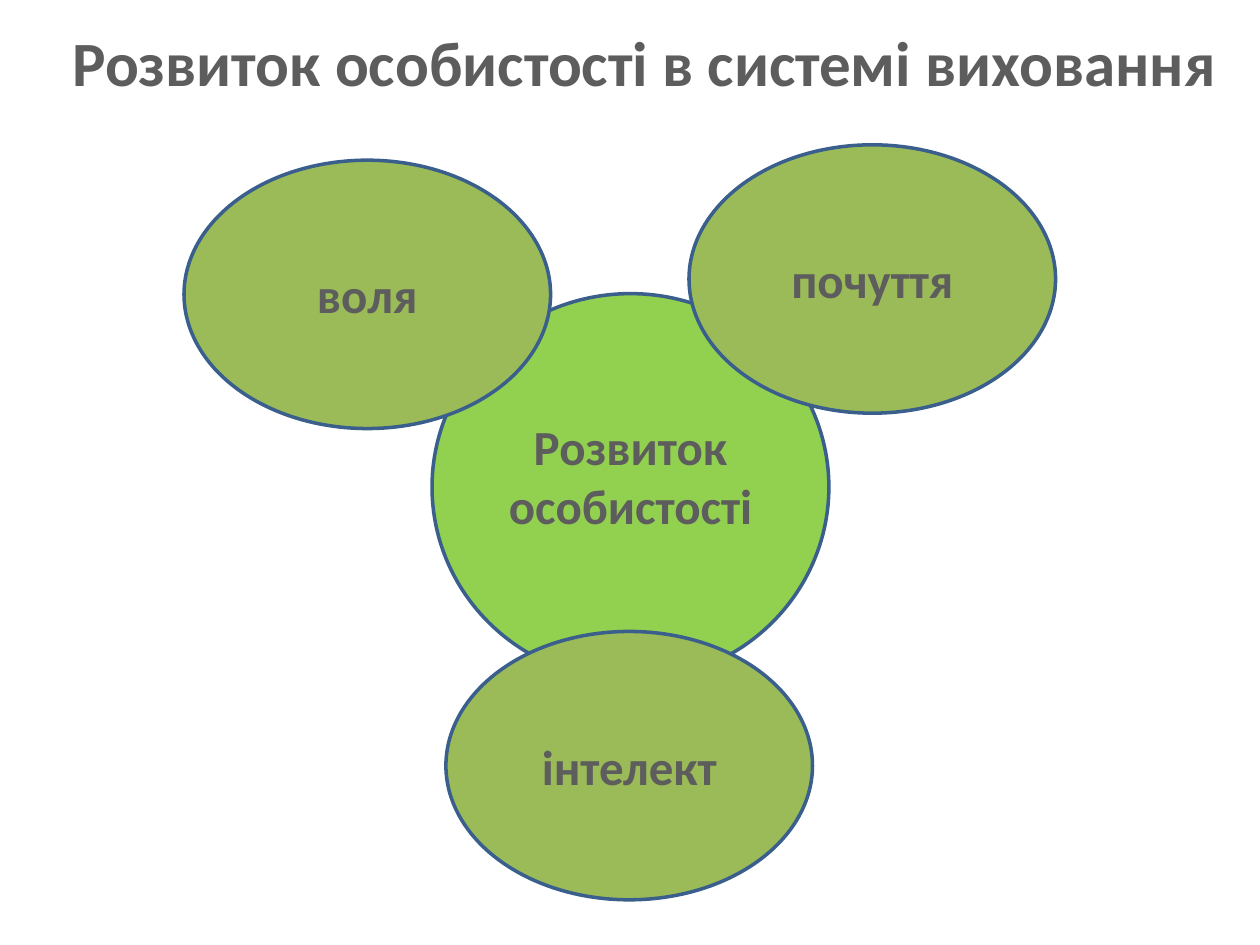
from dataclasses import dataclass

from pptx import Presentation
from pptx import util as u
from pptx.dml.color import RGBColor
from pptx.enum import shapes, text

COLORS = {
    "text": "5D5D5D",
    "outline": "3A5F8C",
    "core": "92D050",
    "aspect": "9BBB59",
}
FONT = "Calibri"
ASPECT_WIDTH, ASPECT_HEIGHT = 7.39, 5.41


@dataclass
class Bubble:
    """A labelled oval; lengths in centimetres."""
    label: str
    left: float
    top: float
    width: float = ASPECT_WIDTH
    height: float = ASPECT_HEIGHT
    color: str = "aspect"
    preset: shapes.MSO_SHAPE = shapes.MSO_SHAPE.OVAL
    bottom_inset: float = 0.13


BUBBLES = [
    Bubble("Розвиток\nособистості", 8.71, 5.92, 8, 7.8, "core",
           shapes.MSO_SHAPE.FLOWCHART_CONNECTOR, bottom_inset=0.61),
    Bubble("воля", 3.71, 3.23),
    Bubble("інтелект", 8.99, 12.73),
    Bubble("почуття", 13.89, 2.92),
]


def color(name: str) -> RGBColor:
    return RGBColor.from_string(COLORS[name])


def write_text(shape, label: str, size: int) -> None:
    frame = shape.text_frame
    frame.text = label
    frame.auto_size = text.MSO_AUTO_SIZE.NONE
    frame.word_wrap = False
    frame.vertical_anchor = text.MSO_ANCHOR.MIDDLE
    for paragraph in frame.paragraphs:
        paragraph.alignment = text.PP_ALIGN.CENTER
        paragraph.font.name = FONT
        paragraph.font.size = u.Pt(size)
        paragraph.font.bold = True
        paragraph.font.color.rgb = color("text")


def draw_bubble(slide, bubble: Bubble) -> None:
    shape = slide.shapes.add_shape(
        bubble.preset, u.Cm(bubble.left), u.Cm(bubble.top),
        u.Cm(bubble.width), u.Cm(bubble.height))
    shape.shadow.inherit = False
    shape.fill.solid()
    shape.fill.fore_color.rgb = color(bubble.color)
    shape.line.color.rgb = color("outline")
    shape.line.width = u.Pt(2)
    write_text(shape, bubble.label, 28)
    shape.text_frame.margin_bottom = u.Cm(bubble.bottom_inset)


def main() -> None:
    presentation = Presentation()
    presentation.slide_width = u.Cm(25.4)
    presentation.slide_height = u.Cm(19.05)
    slide = presentation.slides.add_slide(presentation.slide_layouts[5])

    # Title
    title = slide.shapes.title
    title.left, title.top = u.Cm(1.09), u.Cm(0.33)
    title.width, title.height = u.Cm(23.8), u.Cm(1.8)
    write_text(title, "Розвиток особистості в системі виховання", 36)

    # Core circle first, then the aspects that overlap it
    for bubble in BUBBLES:
        draw_bubble(slide, bubble)

    presentation.save("out.pptx")


if __name__ == "__main__":
    main()
